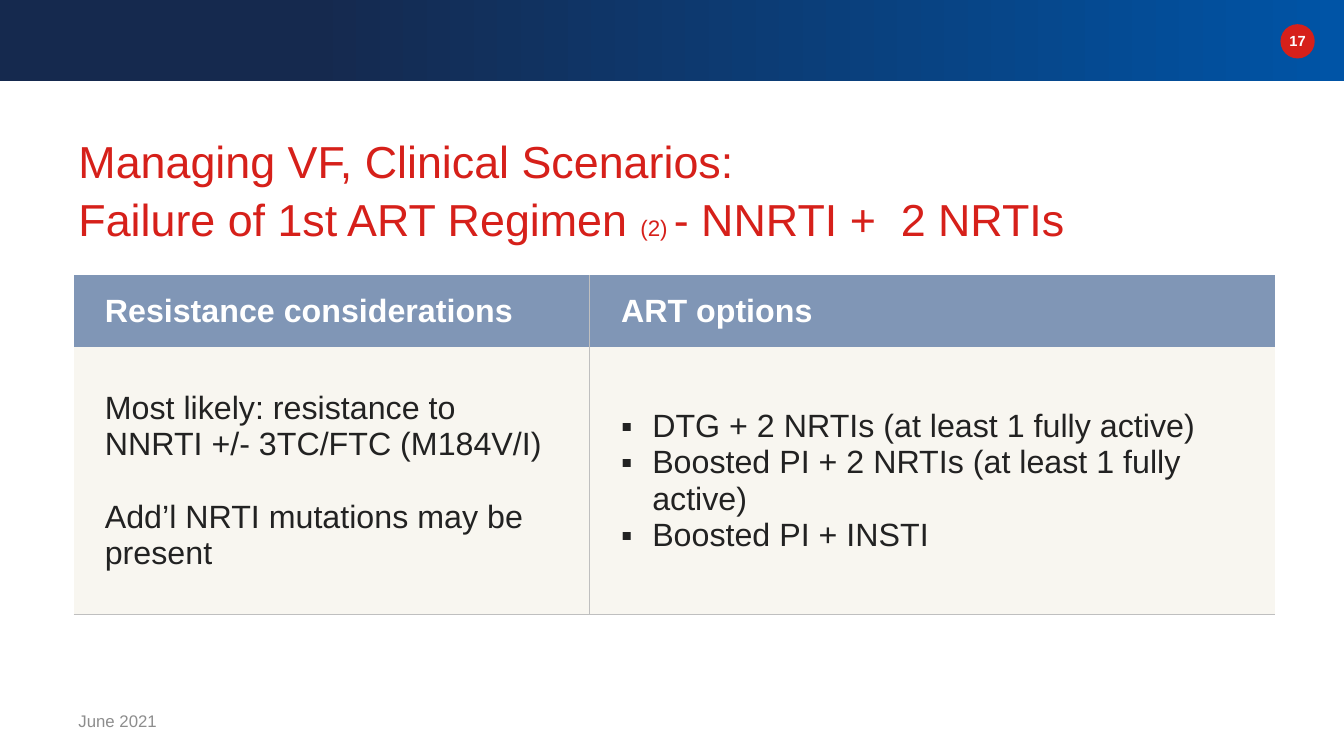
from lxml.etree import SubElement
from pptx import Presentation
from pptx.dml.color import RGBColor
from pptx.enum.shapes import MSO_SHAPE as Shape
from pptx.enum.text import MSO_ANCHOR as Anchor, PP_ALIGN as Align
from pptx.oxml.ns import qn
from pptx.util import Inches, Pt

COLORS = {
    "navy": "15294E", "blue": "0054A6", "red": "D6201A", "white": "FFFFFF",
    "header": "8096B6", "body": "F8F6F0", "ink": "222222",
    "rule": "BFBFBF", "date": "8D8D8D",
}
HEADERS = ["Resistance considerations", "ART options"]
RESISTANCE = [
    "Most likely: resistance to NNRTI +/- 3TC/FTC (M184V/I)",
    "Add’l NRTI mutations may be present",
]
OPTIONS = [
    "DTG + 2 NRTIs (at least 1 fully active)",
    "Boosted PI + 2 NRTIs (at least 1 fully active)",
    "Boosted PI + INSTI",
]


def color(name):
    return RGBColor.from_string(COLORS[name])


def add_span(para, text, size, tone, bold=False):
    span = para.add_run()
    span.text = text
    span.font.name = "Arial"
    span.font.size = Pt(size)
    span.font.bold = bold
    span.font.color.rgb = color(tone)


def add_text_box(page, left, top, width, height, anchor=Anchor.TOP):
    box = page.shapes.add_textbox(Inches(left), Inches(top), Inches(width), Inches(height))
    box.text_frame.word_wrap = True
    box.text_frame.vertical_anchor = anchor
    return box.text_frame.paragraphs[0]


def add_plain_shape(page, kind, left, top, width, height):
    shape = page.shapes.add_shape(
        kind, Inches(left), Inches(top), Inches(width), Inches(height))
    shape.shadow.inherit = False
    shape.line.fill.background()
    return shape


def add_banner(page, left, top, width, height):
    band = add_plain_shape(page, Shape.RECTANGLE, left, top, width, height)
    band.fill.gradient()
    band.fill.gradient_angle = 0
    for stop, (position, tone) in zip(band.fill.gradient_stops, [(0.23, "navy"), (1, "blue")]):
        stop.position = position
        stop.color.rgb = color(tone)

    badge = add_plain_shape(page, Shape.OVAL, left + width - 0.63, top + 0.24, 0.34, 0.34)
    badge.fill.solid()
    badge.fill.fore_color.rgb = color("red")
    para = add_text_box(page, left + width - 0.68, top + 0.27, 0.44, 0.28)
    para.alignment = Align.CENTER
    add_span(para, "17", 10.5, "white", True)


def add_title(page, left, top, width, height):
    para = add_text_box(page, left, top, width, height)
    para.line_spacing = 1.08
    add_span(para, "Managing VF, Clinical Scenarios:", 32, "red")
    para.add_line_break()
    add_span(para, "Failure of 1st ART Regimen ", 32, "red")
    add_span(para, "(2) ", 16, "red")
    add_span(para, "- NNRTI +  2 NRTIs", 32, "red")


def set_borders(cell, ruled_sides):
    properties = cell._tc.get_or_add_tcPr()
    for side in "LRTB":
        line = SubElement(properties, qn(f"a:ln{side}"), w=str(Pt(1)))
        if side in ruled_sides:
            fill = SubElement(line, qn("a:solidFill"))
            SubElement(fill, qn("a:srgbClr"), val=COLORS["rule"])
        else:
            SubElement(line, qn("a:noFill"))


def set_bullet(para):
    properties = para._p.get_or_add_pPr()
    properties.set("marL", str(Inches(0.31)))
    properties.set("indent", str(-Inches(0.31)))
    tint = SubElement(properties, qn("a:buClr"))
    SubElement(tint, qn("a:srgbClr"), val=COLORS["ink"])
    SubElement(properties, qn("a:buFont"), typeface="Arial")
    SubElement(properties, qn("a:buChar"), char="▪")


def fill_cell(cell, lines, fill, tone, ruled_sides, bold=False, bullets=False, gap=0):
    set_borders(cell, ruled_sides)
    cell.fill.solid()
    cell.fill.fore_color.rgb = color(fill)
    cell.vertical_anchor = Anchor.MIDDLE
    cell.margin_left = cell.margin_right = Inches(0.31)
    cell.margin_top = cell.margin_bottom = Inches(0.06)
    for index, text in enumerate(lines):
        para = cell.text_frame.add_paragraph() if index else cell.text_frame.paragraphs[0]
        if index and gap:
            para.space_before = Pt(gap)
        if bullets:
            set_bullet(para)
        add_span(para, text, 23, tone, bold)


def add_regimen_table(page, left, top, widths, heights):
    frame = page.shapes.add_table(
        len(heights), len(widths), Inches(left), Inches(top),
        Inches(sum(widths)), Inches(sum(heights)))
    table = frame.table
    for column, width in zip(table.columns, widths):
        column.width = Inches(width)
    for row, height in zip(table.rows, heights):
        row.height = Inches(height)
    for index, (heading, inner_side) in enumerate(zip(HEADERS, "RL")):
        fill_cell(table.cell(0, index), [heading], "header", "white", inner_side, bold=True)
    fill_cell(table.cell(1, 0), RESISTANCE, "body", "ink", "RB", gap=25.7)
    fill_cell(table.cell(1, 1), OPTIONS, "body", "ink", "LB", bullets=True)


def add_date(page, left, top, width, height):
    para = add_text_box(page, left, top, width, height, Anchor.MIDDLE)
    add_span(para, "June 2021", 12, "date")


def main():
    deck = Presentation()
    deck.slide_width = Inches(13.33)
    deck.slide_height = Inches(7.5)
    page = deck.slides.add_slide(deck.slide_layouts[6])
    add_banner(page, 0, 0, 13.33, 0.8)
    add_title(page, 0.68, 1.23, 11.5, 1.29)
    add_regimen_table(page, 0.73, 2.73, [5.12, 6.8], [0.71, 2.66])
    add_date(page, 0.68, 6.95, 3, 0.4)
    deck.save("out.pptx")


if __name__ == "__main__":
    main()
